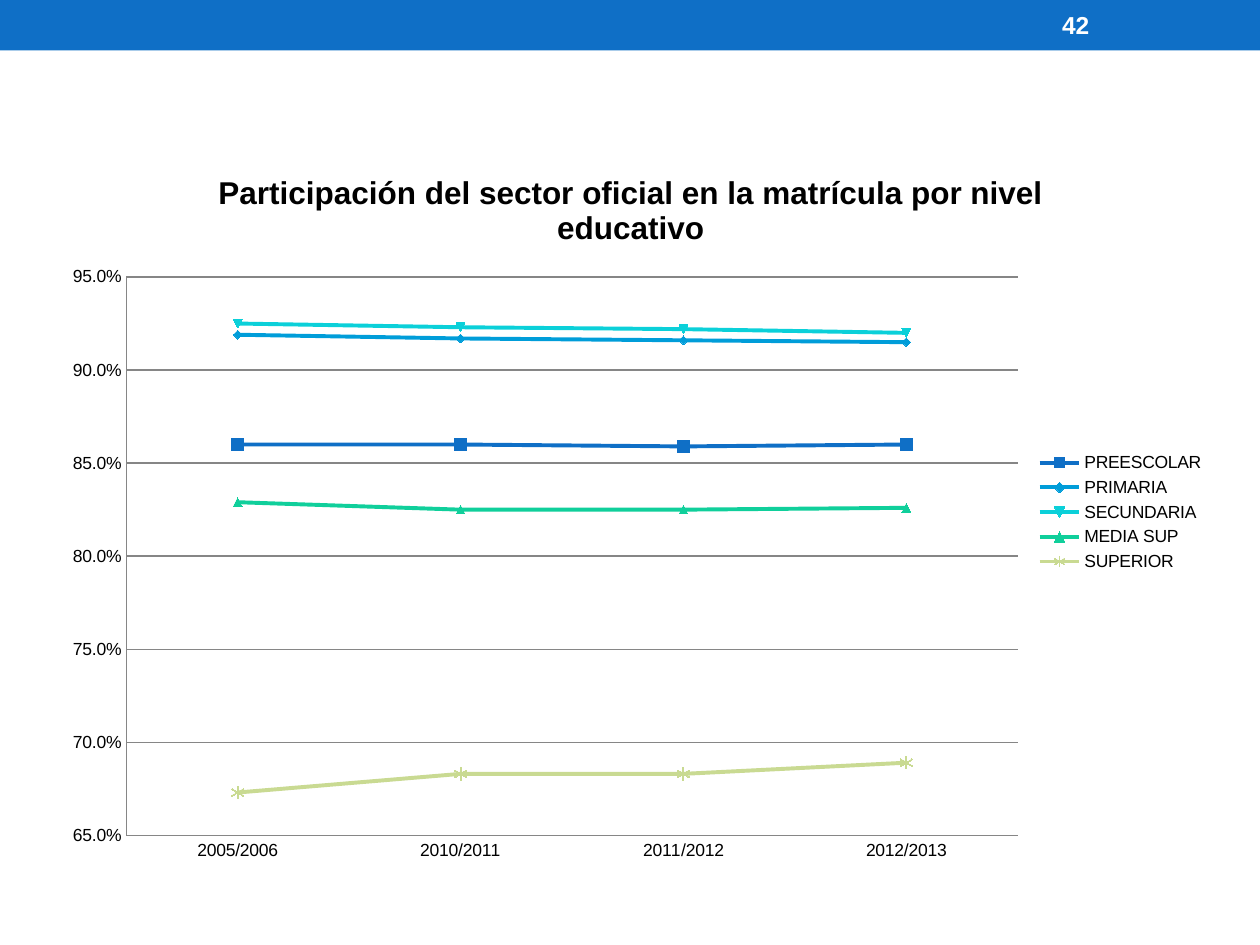
from dataclasses import dataclass

from lxml.etree import SubElement
from pptx import Presentation
from pptx.chart.data import CategoryChartData
from pptx.dml.color import RGBColor
from pptx.enum.chart import XL_CHART_TYPE as ChartType
from pptx.enum.chart import XL_LEGEND_POSITION as LegendPosition
from pptx.enum.chart import XL_MARKER_STYLE as Marker
from pptx.enum.chart import XL_TICK_MARK as TickMark
from pptx.enum.shapes import MSO_SHAPE as Shape
from pptx.enum.text import MSO_ANCHOR as Anchor
from pptx.oxml.ns import qn
from pptx.util import Cm, Pt


@dataclass(frozen=True)
class Theme:
    font: str = "Arial"
    banner: str = "0F6FC6"
    light: str = "FFFFFF"
    dark: str = "000000"
    grid: str = "868686"
    label_size: float = 10
    number_size: float = 14
    title_size: float = 18
    series_width: float = 2.25
    grid_width: float = 0.75


YEARS = ["2005/2006", "2010/2011", "2011/2012", "2012/2013"]
LEVELS = [  # name, shares, colour, marker style, marker size
    ("PREESCOLAR", (0.86, 0.86, 0.859, 0.86), "0F6FC6", Marker.SQUARE, 7),
    ("PRIMARIA", (0.919, 0.917, 0.916, 0.915), "009DD9", Marker.AUTOMATIC, 5),
    ("SECUNDARIA", (0.925, 0.923, 0.922, 0.92), "0BD0D9", Marker.AUTOMATIC, 5),
    ("MEDIA SUP", (0.829, 0.825, 0.825, 0.826), "10CF9B", Marker.AUTOMATIC, 5),
    ("SUPERIOR", (0.673, 0.683, 0.683, 0.689), "C9DA92", Marker.STAR, 7),
]


def format_font(font, name, size, color, bold=False):
    font.name = name
    font.size = Pt(size)
    font.bold = bold
    font.color.rgb = RGBColor.from_string(color)


def write(frame, text, **style):
    span = frame.paragraphs[0].add_run()
    span.text = text
    format_font(span.font, **style)


def paint(fill, color):
    fill.solid()
    fill.fore_color.rgb = RGBColor.from_string(color)


def stroke(line, color, width):
    paint(line.fill, color)
    line.width = Pt(width)


def place_plot(chart, **fractions):
    """Fix the inner plot area as fractions of the chart frame."""
    area = chart.element.find(".//" + qn("c:plotArea"))
    for old in area.findall(qn("c:layout")):
        area.remove(old)
    layout = SubElement(area, qn("c:layout"))
    area.insert(0, layout)
    manual = SubElement(layout, qn("c:manualLayout"))
    settings = {"layoutTarget": "inner", "xMode": "edge", "yMode": "edge", **fractions}
    for tag, value in settings.items():
        SubElement(manual, qn(f"c:{tag}")).set("val", str(value))


class PageBuilder:
    def __init__(self, page, theme):
        self.page = page
        self.theme = theme

    def banner(self, *frame):
        box = self.page.shapes.add_shape(Shape.RECTANGLE, *map(Cm, frame))
        box.shadow.inherit = False
        paint(box.fill, self.theme.banner)
        box.line.fill.background()

    def page_number(self, text, *frame):
        box = self.page.shapes.add_textbox(*map(Cm, frame))
        box.text_frame.word_wrap = True
        box.text_frame.vertical_anchor = Anchor.MIDDLE
        write(box.text_frame, text, name=self.theme.font,
              size=self.theme.number_size, color=self.theme.light, bold=True)

    def line_chart(self, title, years, levels, *frame):
        theme = self.theme
        data = CategoryChartData(number_format="0.0%")
        data.categories = years
        for name, shares, *_ in levels:
            data.add_series(name, shares)
        chart = self.page.shapes.add_chart(
            ChartType.LINE_MARKERS, *map(Cm, frame), data).chart
        format_font(chart.font, theme.font, theme.label_size, theme.dark)
        write(chart.chart_title.text_frame, title, name=theme.font,
              size=theme.title_size, color=theme.dark, bold=True)
        chart.has_legend = True
        chart.legend.position = LegendPosition.RIGHT
        chart.legend.include_in_layout = False
        chart.plots[0].vary_by_categories = False
        for series, (_, _, color, style, size) in zip(chart.plots[0].series, levels):
            series.smooth = False
            stroke(series.format.line, color, theme.series_width)
            series.marker.style = style
            series.marker.size = size
            paint(series.marker.format.fill, color)
            stroke(series.marker.format.line, color, theme.grid_width)
        self.axes(chart)
        place_plot(chart, x=0.07, y=0.18, w=0.76, h=0.76)

    def axes(self, chart):
        theme = self.theme
        shares = chart.value_axis
        for axis in (chart.category_axis, shares):
            axis.major_tick_mark = axis.minor_tick_mark = TickMark.NONE
            stroke(axis.format.line, theme.grid, theme.grid_width)
        shares.minimum_scale, shares.maximum_scale = 0.65, 0.95
        shares.major_unit = 0.05
        shares.tick_labels.number_format = "0.0%"
        shares.tick_labels.number_format_is_linked = False
        shares.has_major_gridlines = True
        stroke(shares.major_gridlines.format.line, theme.grid, theme.grid_width)


def main():
    deck = Presentation()
    deck.slide_width, deck.slide_height = Cm(25.4), Cm(19.05)
    builder = PageBuilder(deck.slides.add_slide(deck.slide_layouts[6]), Theme())
    builder.banner(0, 0, 25.4, 1.02)
    builder.page_number("42", 21.16, 0.05, 2.97, 0.91)
    builder.line_chart(
        "Participación del sector oficial en la matrícula por nivel educativo",
        YEARS, LEVELS, 0.89, 2.92, 23.65, 14.81)
    deck.save("out.pptx")


if __name__ == "__main__":
    main()
